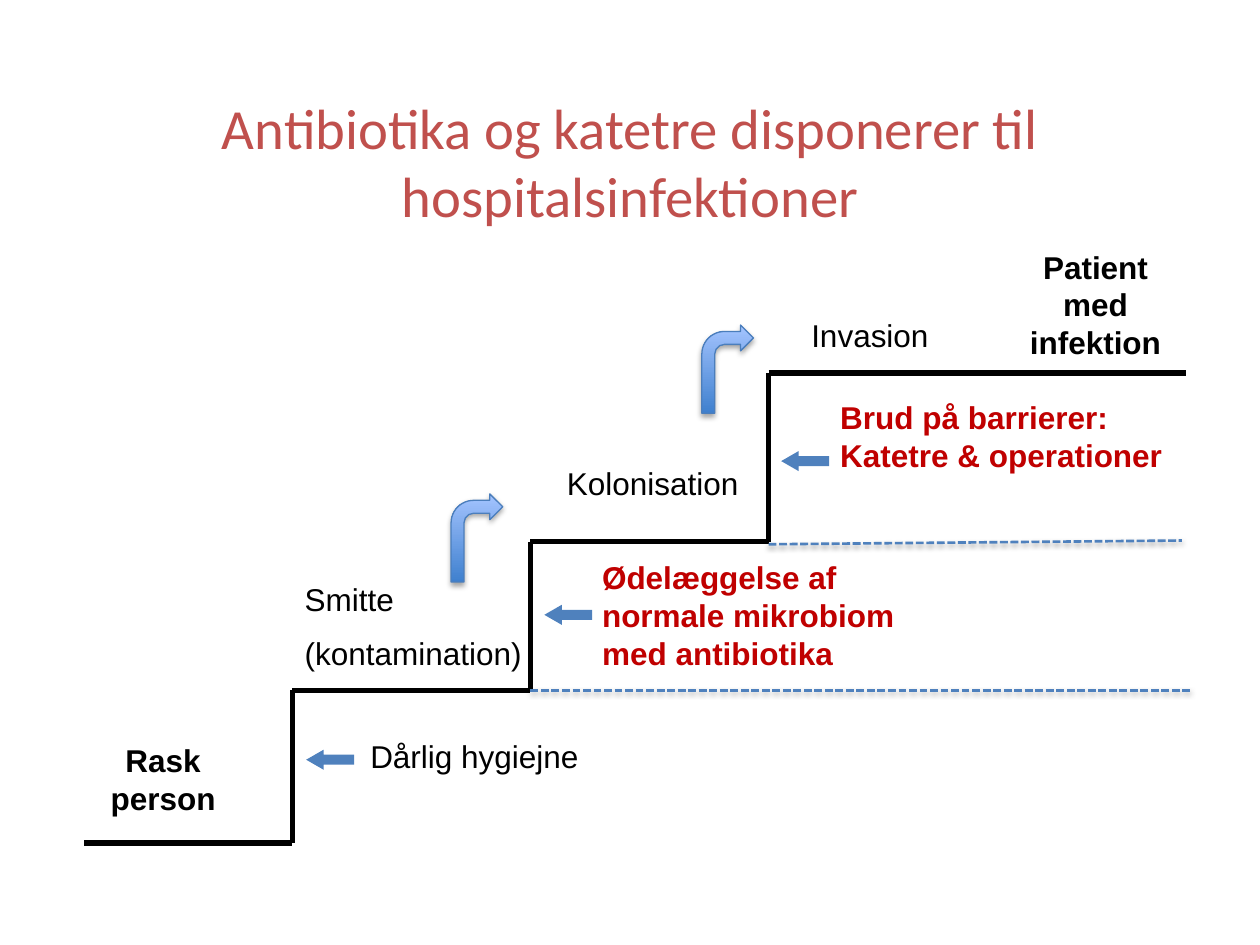
import dataclasses
import itertools

import pptx
import pptx.dml.color
import pptx.enum.dml
import pptx.enum.shapes
import pptx.enum.text
import pptx.oxml
import pptx.oxml.ns
import pptx.util

SHAPE = pptx.enum.shapes.MSO_SHAPE
ALIGN = pptx.enum.text.PP_ALIGN
ANCHOR = pptx.enum.text.MSO_ANCHOR
Pt = pptx.util.Pt


def rgb(value):
    return pptx.dml.color.RGBColor.from_string(value)


@dataclasses.dataclass
class Theme:
    ink: str = "000000"
    title: str = "C0504D"
    alert: str = "C00000"
    accent: str = "4F81BD"
    edge: str = "4B7EBC"
    grad: tuple = ("3F80CE", "A4C4FF")
    title_size: float = 32.4
    text_size: float = 18
    title_font: str = "Calibri"
    text_font: str = "Arial"


class Deck:
    """Style and current slide; places are in columns and rows of a 100 x 75 grid."""

    def __init__(self, theme):
        self.theme = theme
        self.prs = pptx.Presentation()
        self.prs.slide_width = pptx.util.Inches(10)
        self.prs.slide_height = pptx.util.Inches(7.5)
        self.s = self.prs.slides.add_slide(self.prs.slide_layouts[6])

    def grid(self, *values):
        """Turn column, row, column, row ... into slide lengths."""
        units = itertools.cycle((self.prs.slide_width / 100, self.prs.slide_height / 75))
        return [round(v * u) for v, u in zip(values, units)]

    def effects(self, sp, alpha=None, dist=0):
        """Write the shadow; without alpha there is none."""
        ns = pptx.oxml.ns.nsdecls("a")
        shadow = "" if alpha is None else (
            f'<a:outerShdw blurRad="{Pt(3.1)}" dist="{Pt(dist)}" dir="5400000" rotWithShape="0">'
            f'<a:srgbClr val="000000"><a:alpha val="{alpha * 1000}"/></a:srgbClr></a:outerShdw>')
        xml = f"<a:effectLst {ns}>{shadow}</a:effectLst>"
        sp._element.spPr.append(pptx.oxml.parse_xml(xml))

    def text(self, box, *lines, align=ALIGN.LEFT, anchor=ANCHOR.TOP, wrap=True, gap=0, **font):
        tf = self.s.shapes.add_textbox(*self.grid(*box)).text_frame
        tf.word_wrap, tf.vertical_anchor = wrap, anchor
        color = font.pop("color", self.theme.ink)
        style = {"name": self.theme.text_font, "size": Pt(self.theme.text_size), **font}
        for i, line in enumerate(lines):
            p = tf.add_paragraph() if i else tf.paragraphs[0]
            p.alignment = align
            if i:
                p.space_before = Pt(gap)
            r = p.add_run()
            r.text = line
            r.font.color.rgb = rgb(color)
            for key, value in style.items():
                setattr(r.font, key, value)

    def line(self, start, end, color, width, dash=None, **shadow):
        c = self.s.shapes.add_connector(
            pptx.enum.shapes.MSO_CONNECTOR.STRAIGHT, *self.grid(*start, *end))
        c.line.color.rgb = rgb(color)
        for key, value in {"width": Pt(width), "dash_style": dash}.items():
            setattr(c.line, key, value)
        self.effects(c, **shadow)

    def left_arrow(self, *box):
        sp = self.s.shapes.add_shape(SHAPE.LEFT_ARROW, *self.grid(*box))
        sp.adjustments[1] = 0.871
        sp.fill.solid()
        sp.fill.fore_color.rgb = rgb(self.theme.accent)
        sp.line.fill.background()
        sp.shadow.inherit = False

    def bent_arrow(self, *box):
        sp = self.s.shapes.add_shape(SHAPE.BENT_ARROW, *self.grid(*box))
        sp.fill.gradient()
        sp.fill.gradient_angle = 90
        for stop, color in zip(sp.fill.gradient_stops, self.theme.grad):
            stop.color.rgb = rgb(color)
        sp.line.color.rgb = rgb(self.theme.edge)
        sp.line.width = Pt(0.75)
        self.effects(sp, alpha=35, dist=1.8)


def main():
    theme = Theme()
    d = Deck(theme)
    centred = {"align": ALIGN.CENTER, "anchor": ANCHOR.MIDDLE}

    # Title
    d.text((5, 7.6, 90, 10.4), "Antibiotika og katetre disponerer til hospitalsinfektioner",
           name=theme.title_font, size=Pt(theme.title_size), color=theme.title, **centred)

    # Staircase: each tread, then the riser up to the next one
    edges = (6.7, 23.2, 42.1, 61, 94.1)
    levels = (66.9, 54.8, 43, 29.6)
    corners = [(x, y) for i, y in enumerate(levels) for x in edges[i:i + 2]]
    for start, end in itertools.pairwise(corners):
        d.line(start, end, theme.ink, 3)

    # Start and end states
    ends = {"bold": True, "wrap": False, **centred}
    d.text((5.1, 59.5, 15.7, 4.7), "Rask person", **ends)
    d.text((79.1, 21.8, 15.7, 4.7), "Patient med", "infektion", **ends)

    # Stages on the steps
    d.text((23.2, 45.5, 21.3, 8.5), "Smitte", "(kontamination)", gap=9.5)
    d.text((44, 36.3, 18.1, 4), "Kolonisation")
    d.text((63.4, 24.6, 14.2, 4), "Invasion")

    # Causes, each with an arrow to its riser
    d.text((28.4, 58, 20.5, 4), "Dårlig hygiejne")
    alert = {"bold": True, "color": theme.alert}
    d.text((46.8, 43.8, 29.2, 10.1), "Ødelæggelse af normale mikrobiom med antibiotika", **alert)
    d.text((65.7, 31.1, 27.7, 7.1), "Brud på barrierer: Katetre & operationer", **alert)
    for x, y in ((24.3, 59.5), (43.2, 48), (62, 35.8)):
        d.left_arrow(x, y, 3.8, 1.6)

    # Dashed levels
    for start, end in (((42.1, 54.8), (94.6, 54.8)), ((61, 43.2), (93.8, 42.9))):
        d.line(start, end, theme.accent, 1.5, pptx.enum.dml.MSO_LINE.SQUARE_DOT,
               alpha=38, dist=1.6)

    # Bent arrows up to the next stage
    for x, y in ((35.8, 39.2), (55.7, 25.8)):
        d.bent_arrow(x, y, 4.1, 7)

    d.prs.save("out.pptx")


if __name__ == "__main__":
    main()
